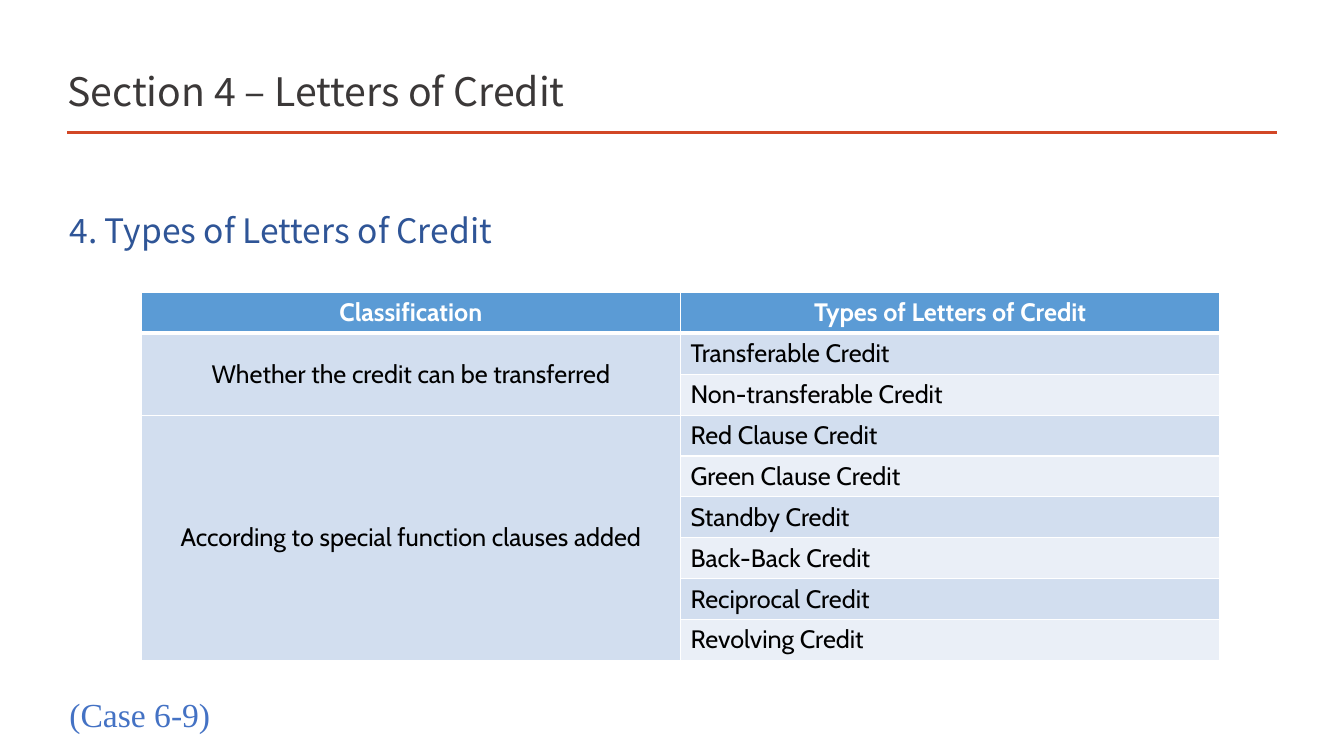
from pptx import Presentation
from pptx.dml.color import RGBColor
from pptx.enum import shapes, text
from pptx.oxml import parse_xml
from pptx.oxml.ns import nsdecls
from pptx.util import Cm, Pt

TITLE = "Section 4 – Letters of Credit"
SUBTITLE = "4. Types of Letters of Credit"
CASE = "(Case 6-9)"
HEADERS = ["Classification", "Types of Letters of Credit"]
GROUPS = [
    ("Whether the credit can be transferred",
     ["Transferable Credit", "Non-transferable Credit"]),
    ("According to special function clauses added",
     ["Red Clause Credit", "Green Clause Credit", "Standby Credit",
      "Back-Back Credit", "Reciprocal Credit", "Revolving Credit"]),
]
HEADING_FONT, TABLE_FONT, CASE_FONT = "Noto Sans CJK SC", "Cabin", "Times New Roman"
HEADER_FILL, BANDS = "5B9BD5", ["D2DEEF", "EAEFF7"]
LEFT, WIDTH = 1.5, 30.68
COL_W, ROW_H = 13.59, 1.03


def rgb(value):
    return RGBColor.from_string(value)


def write(tf, content, font, size, color, bold=False, align=text.PP_ALIGN.LEFT, spacing=None):
    p = tf.paragraphs[0]
    p.alignment = align
    if spacing:
        p.line_spacing = Pt(spacing)
    r = p.add_run()
    r.text = content
    r.font.name, r.font.size, r.font.bold = font, Pt(size), bold
    r.font.color.rgb = rgb(color)


def add_text(s, top, height, content, font, color, spacing):
    tf = s.shapes.add_textbox(Cm(LEFT), Cm(top), Cm(WIDTH), Cm(height)).text_frame
    tf.word_wrap = True
    write(tf, content, font, 24, color, spacing=spacing)


def set_borders(cell, **widths):
    tcPr = cell._tc.get_or_add_tcPr()
    for i, side in enumerate("LRTB"):
        width = Pt(widths.get(side, 1))
        tcPr.insert(i, parse_xml(
            f'<a:ln{side} {nsdecls("a")} w="{width}"><a:solidFill>'
            f'<a:srgbClr val="FFFFFF"/></a:solidFill></a:ln{side}>'))


def format_cell(cell, fill, content="", color="000000", **fmt):
    cell.fill.solid()
    cell.fill.fore_color.rgb = rgb(fill)
    if content:
        write(cell.text_frame, content, TABLE_FONT, 18, color, **fmt)


def add_credit_table(s):
    rows = 1 + sum(len(types) for _, types in GROUPS)
    table = s.shapes.add_table(rows, 2, Cm(3.56), Cm(7.37),
                               Cm(2 * COL_W), Cm(rows * ROW_H)).table
    for column in table.columns:
        column.width = Cm(COL_W)
    for c, header in enumerate(HEADERS):
        format_cell(table.cell(0, c), HEADER_FILL, header, "FFFFFF",
                    bold=True, align=text.PP_ALIGN.CENTER)
        set_borders(table.cell(0, c), B=3)
    row = 1
    for group, types in GROUPS:
        table.cell(row, 0).merge(table.cell(row + len(types) - 1, 0))
        for i, credit in enumerate(types):
            format_cell(table.cell(row, 0), BANDS[0], "" if i else group,
                        align=text.PP_ALIGN.CENTER)
            format_cell(table.cell(row, 1), BANDS[(row - 1) % 2], credit)
            for c in range(2):
                table.cell(row, c).vertical_anchor = text.MSO_ANCHOR.MIDDLE
                set_borders(table.cell(row, c), T=3 if row == 1 else 1)
            row += 1


def main():
    prs = Presentation()
    prs.slide_width, prs.slide_height = Cm(33.87), Cm(19.05)
    s = prs.slides.add_slide(prs.slide_layouts[5])

    rule = s.shapes.add_connector(shapes.MSO_CONNECTOR.STRAIGHT,
                                  Cm(1.69), Cm(3.33), Cm(32.19), Cm(3.33))
    rule.line.color.rgb = rgb("D24726")
    rule.line.width = Pt(2)
    rule._element.spPr.append(parse_xml(f'<a:effectLst {nsdecls("a")}/>'))

    title = s.shapes.title
    title.left, title.top, title.width, title.height = Cm(1.45), Cm(1.24), Cm(23.5), Cm(1.78)
    title.text_frame.vertical_anchor = text.MSO_ANCHOR.BOTTOM
    write(title.text_frame, TITLE, HEADING_FONT, 28, "3B3838")

    add_text(s, 5.54, 1.1, SUBTITLE, HEADING_FONT, "2F5597", 18)
    add_credit_table(s)
    add_text(s, 17.32, 1.57, CASE, CASE_FONT, "4472C4", 30)
    prs.save("out.pptx")


if __name__ == "__main__":
    main()
